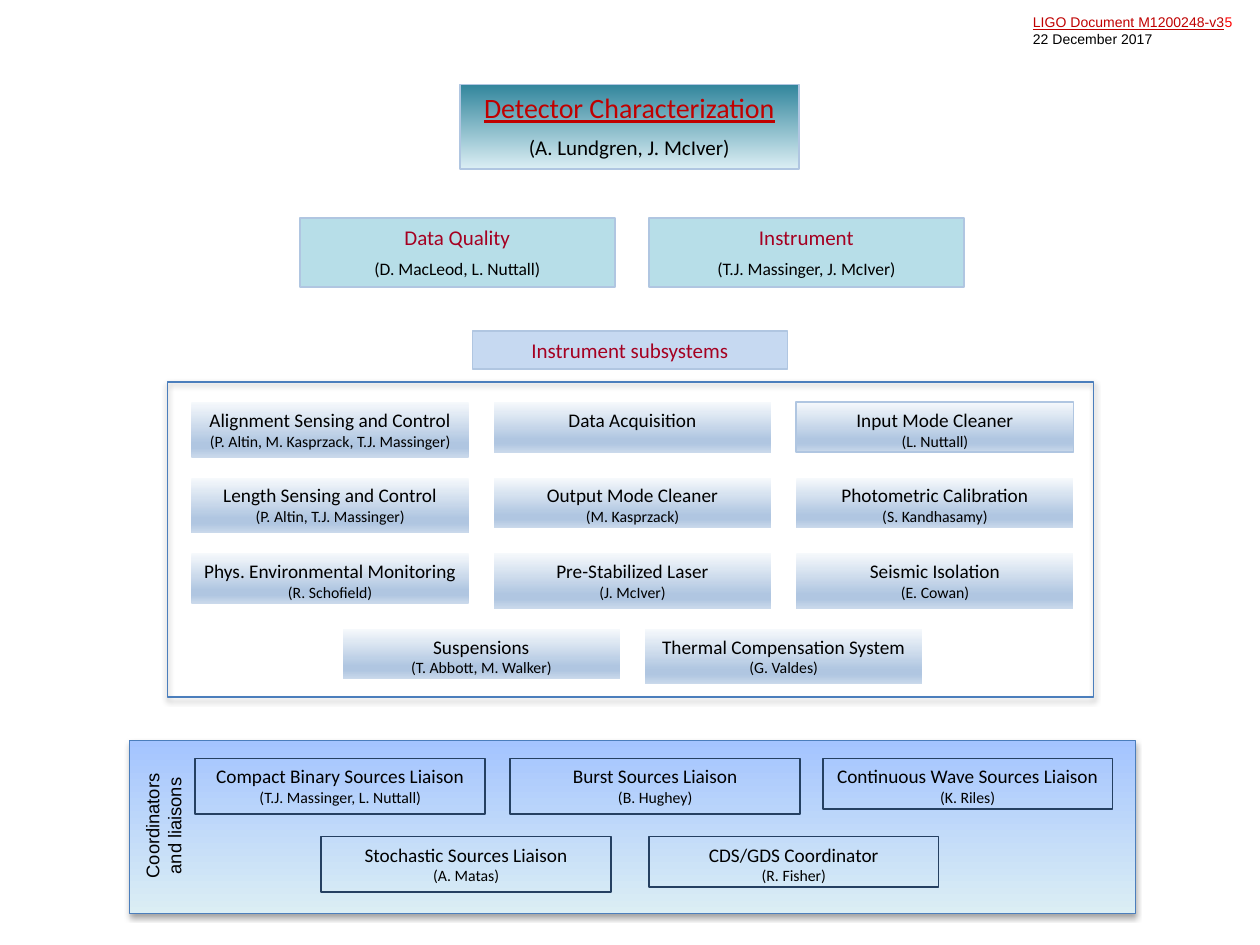
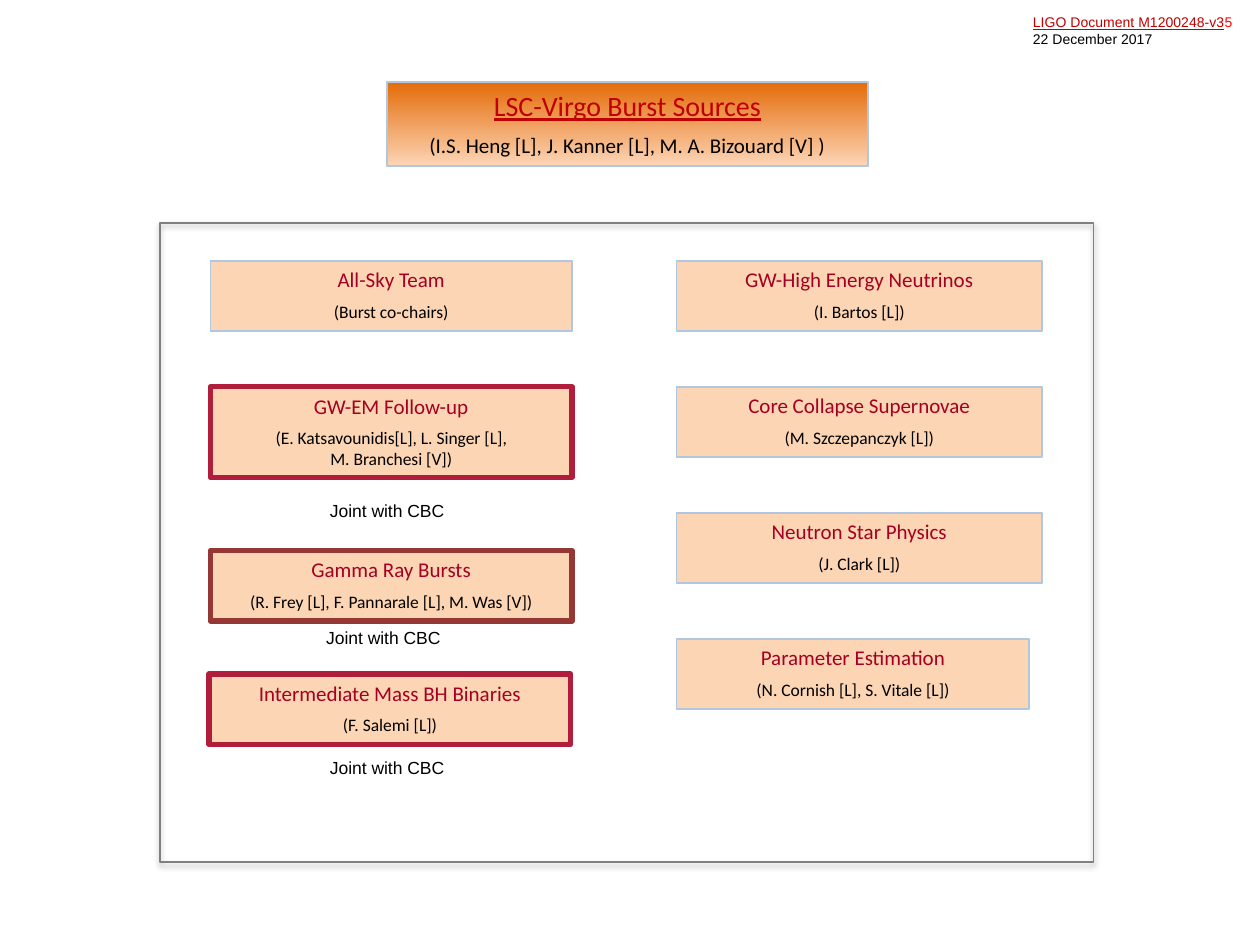
from copy import deepcopy
from dataclasses import dataclass, replace
from typing import Optional

from lxml import etree
from pptx import Presentation
from pptx import util as u
from pptx.dml.color import RGBColor
from pptx.enum import shapes, text
from pptx.oxml.ns import qn

COLORS = {
    "black": "000000", "link": "C00000", "version": "FF0000", "heading": "A50021",
    "pale_line": "B0C6E1", "frame_line": "4B7EBC", "liaison_line": "254061",
    "gray": "808080", "crimson": "B01E3B", "brick": "953735",
    "aqua": "B7DEE8", "periwinkle": "C6D9F1", "peach": "FCD5B5",
    "teal": "31859C", "ice": "DBEEF4", "orange": "E46C0A", "sky": "A4C4FF",
    "mist": "F6F9FC", "haze": "CAD9EB",
}

TITLE = {"name": "Calibri", "size": u.Pt(16), "underline": True, "color": "link"}
TITLE_PEOPLE = {"name": "Calibri", "size": u.Pt(12), "underline": False, "color": "black"}
HEADING = {"name": "Calibri", "size": u.Pt(12), "color": "heading"}
HEADING_PEOPLE = {"name": "Calibri", "size": u.Pt(10), "color": "black"}
ITEM = {"name": "Calibri", "size": u.Pt(11), "color": "black"}
ITEM_PEOPLE = {"name": "Calibri", "size": u.Pt(9), "color": "black"}
LABEL = {"name": "Arial", "size": u.Pt(10.5), "color": "black"}
NOTE = {"name": "Arial", "size": u.Pt(10), "color": "black"}
DOC_DATE = {"name": "Arial", "size": u.Pt(8), "color": "black"}
DOC_LINK = {**DOC_DATE, "underline": True, "color": "link"}
DOC_VERSION = {**DOC_DATE, "color": "version"}

SUBSYSTEM_FILL = ((0, "mist"), (74, "pale_line"), (83, "pale_line"), (100, "haze"))


@dataclass(frozen=True)
class Style:
    fill: tuple = ()
    line: Optional[str] = None
    width: float = 1
    shadow: bool = False
    heading: Optional[dict] = None
    people: Optional[dict] = None
    spaced: bool = False


@dataclass(frozen=True)
class Box:
    left: float
    top: float
    width: float
    height: float
    heading: str = ""
    people: str = ""


DETCHAR_TITLE = Style(((0, "teal"), (100, "ice")), "pale_line",
                      heading=TITLE, people=TITLE_PEOPLE, spaced=True)
BURST_TITLE = replace(DETCHAR_TITLE, fill=((0, "orange"), (100, "peach")))
GROUP = Style(((0, "aqua"),), "pale_line", heading=HEADING, people=HEADING_PEOPLE, spaced=True)
BANNER = replace(GROUP, fill=((0, "periwinkle"),))
TEAM = replace(GROUP, fill=((0, "peach"),))
JOINT = replace(TEAM, line="crimson", width=3)
SUBSYSTEM = Style(SUBSYSTEM_FILL, heading=ITEM, people=ITEM_PEOPLE)
LIAISON = Style(line="liaison_line", heading=ITEM, people=ITEM_PEOPLE)
SUBSYSTEM_FRAME = Style(line="frame_line", shadow=True)
LIAISON_FRAME = Style(((0, "sky"), (100, "ice")), "frame_line", 0.75, True)
TEAM_FRAME = Style(line="gray", shadow=True)

SUBSYSTEM_ROWS = (
    (1.52, (("Alignment Sensing and Control", "(P. Altin, M. Kasprzack, T.J. Massinger)", 0.44),
            ("Data Acquisition", "", 0.4),
            ("Input Mode Cleaner", "(L. Nuttall)", 0.4))),
    (1.52, (("Length Sensing and Control", "(P. Altin, T.J. Massinger)", 0.44),
            ("Output Mode Cleaner", "(M. Kasprzack)", 0.4),
            ("Photometric Calibration", "(S. Kandhasamy)", 0.4))),
    (1.52, (("Phys. Environmental Monitoring", "(R. Schofield)", 0.4),
            ("Pre-Stabilized Laser", "(J. McIver)", 0.44),
            ("Seismic Isolation", "(E. Cowan)", 0.44))),
    (2.72, (("Suspensions", "(T. Abbott, M. Walker)", 0.4),
            ("Thermal Compensation System", "(G. Valdes)", 0.44))),
)

LIAISONS = (
    Box(1.55, 6.02, 2.3, 0.44, "Compact Binary Sources Liaison", "(T.J. Massinger, L. Nuttall)"),
    Box(4.05, 6.02, 2.3, 0.44, "Burst Sources Liaison", "(B. Hughey)"),
    Box(6.53, 6.02, 2.3, 0.4, "Continuous Wave Sources Liaison", "(K. Riles)"),
    Box(2.55, 6.64, 2.3, 0.44, "Stochastic Sources Liaison", "(A. Matas)"),
    Box(5.15, 6.64, 2.3, 0.4, "CDS/GDS Coordinator", "(R. Fisher)"),
)

LEFT_TEAMS = (
    (Box(1.67, 2.07, 2.87, 0.56, "All-Sky Team", "(Burst co-chairs)"), TEAM),
    (Box(1.67, 3.07, 2.87, 0.72, "GW-EM Follow-up",
         "(E. Katsavounidis[L], L. Singer [L],\nM. Branchesi [V])"), JOINT),
    (Box(1.67, 4.37, 2.87, 0.56, "Gamma Ray Bursts",
         "(R. Frey [L], F. Pannarale [L], M. Was [V])"), replace(JOINT, line="brick")),
    (Box(1.66, 5.35, 2.87, 0.56, "Intermediate Mass BH Binaries", "(F. Salemi [L])"), JOINT),
)

RIGHT_TEAMS = (
    ("GW-High Energy Neutrinos", "(I. Bartos [L])", 2.9),
    ("Core Collapse Supernovae", "(M. Szczepanczyk [L])", 2.9),
    ("Neutron Star Physics", "(J. Clark [L])", 2.9),
    ("Parameter Estimation", "(N. Cornish [L], S. Vitale [L])", 2.8),
)

JOINT_NOTES = ((2.52, 3.92), (2.49, 4.93), (2.52, 5.96))


def rgb(name: str) -> RGBColor:
    return RGBColor.from_string(COLORS[name])


def corners(box: Box) -> list:
    return [u.Inches(v) for v in (box.left, box.top, box.width, box.height)]


def format_run(r, fmt: dict) -> None:
    for key, value in fmt.items():
        if key == "color":
            r.font.color.rgb = rgb(value)
        else:
            setattr(r.font, key, value)


def write(p, content: str, fmt: dict, align=text.PP_ALIGN.CENTER) -> None:
    p.text = content
    p.alignment = align
    for r in p.runs:
        format_run(r, fmt)
    for br in p._p.findall(qn("a:br")):
        br.append(deepcopy(p.runs[0]._r.rPr))


def prepare(tf, wrap: bool = True, side: float = 0.05) -> None:
    settings = {
        "word_wrap": wrap, "auto_size": text.MSO_AUTO_SIZE.NONE,
        "vertical_anchor": text.MSO_ANCHOR.TOP,
        "margin_left": u.Inches(side), "margin_right": u.Inches(side),
        "margin_top": u.Inches(0.05), "margin_bottom": u.Inches(0.05),
    }
    for key, value in settings.items():
        setattr(tf, key, value)


def paint(sp, stops: tuple) -> None:
    if not stops:
        sp.fill.background()
    elif len(stops) == 1:
        sp.fill.solid()
        sp.fill.fore_color.rgb = rgb(stops[0][1])
    else:
        sp.fill.gradient()
        sp.fill.gradient_angle = 270
        gs_list = next(sp._element.spPr.iter(qn("a:gsLst")))
        for gs in list(gs_list):
            gs_list.remove(gs)
        for position, name in stops:
            gs = etree.SubElement(gs_list, qn("a:gs"), pos=str(position * 1000))
            etree.SubElement(gs, qn("a:srgbClr"), val=COLORS[name])


def cast_shadow(sp) -> None:
    effects = sp._element.spPr.find(qn("a:effectLst"))
    shadow = etree.SubElement(effects, qn("a:outerShdw"), blurRad="40000", dist="23000",
                              dir="5400000", rotWithShape="0")
    color = etree.SubElement(shadow, qn("a:srgbClr"), val=COLORS["black"])
    etree.SubElement(color, qn("a:alpha"), val="35000")


def dress(sp, box: Box, style: Style) -> None:
    paint(sp, style.fill)
    if style.line:
        sp.line.color.rgb = rgb(style.line)
        sp.line.width = u.Pt(style.width)
    else:
        sp.line.fill.background()
    if box.heading:
        tf = sp.text_frame
        prepare(tf)
        write(tf.paragraphs[0], box.heading, style.heading)
        if box.people:
            p = tf.add_paragraph()
            write(p, box.people, style.people)
            if style.spaced:
                p.space_before = int(style.people["size"] / 2)


def add_box(s, box: Box, style: Style) -> None:
    sp = s.shapes.add_shape(shapes.MSO_SHAPE.RECTANGLE, *corners(box))
    sp.shadow.inherit = False
    dress(sp, box, style)
    if style.shadow:
        cast_shadow(sp)


def add_text(s, box: Box, fmt: dict, align, rotation: float = 0) -> None:
    tb = s.shapes.add_textbox(*corners(box))
    tb.rotation = rotation
    tf = tb.text_frame
    prepare(tf, wrap=False, side=0.1)
    for i, line in enumerate(box.heading.split("\n")):
        write(tf.add_paragraph() if i else tf.paragraphs[0], line, fmt, align)


def add_titled_slide(prs, box: Box, style: Style):
    s = prs.slides.add_slide(prs.slide_layouts[5])
    sp = s.shapes.title
    sp.left, sp.top, sp.width, sp.height = corners(box)
    dress(sp, box, style)

    tf = s.shapes.add_textbox(*corners(Box(8.1, 0.06, 1.84, 0.37))).text_frame
    prepare(tf, wrap=False, side=0.1)
    write(tf.paragraphs[0], "LIGO Document M1200248-v3", DOC_LINK, text.PP_ALIGN.LEFT)
    r = tf.paragraphs[0].add_run()
    r.text = "5"
    format_run(r, DOC_VERSION)
    write(tf.add_paragraph(), "22 December 2017", DOC_DATE, text.PP_ALIGN.LEFT)
    return s


def build_detector_slide(prs) -> None:
    s = add_titled_slide(prs, Box(3.65, 0.67, 2.69, 0.67, "Detector Characterization",
                                  "(A. Lundgren, J. McIver)"), DETCHAR_TITLE)
    add_box(s, Box(2.38, 1.73, 2.5, 0.55, "Data Quality", "(D. MacLeod, L. Nuttall)"), GROUP)
    add_box(s, Box(5.15, 1.73, 2.5, 0.55, "Instrument", "(T.J. Massinger, J. McIver)"), GROUP)
    add_box(s, Box(3.75, 2.63, 2.5, 0.3, "Instrument subsystems"), BANNER)

    add_box(s, Box(1.33, 3.03, 7.35, 2.5), SUBSYSTEM_FRAME)
    for row, (left, items) in enumerate(SUBSYSTEM_ROWS):
        for col, (heading, people, height) in enumerate(items):
            outlined = heading == "Input Mode Cleaner"
            style = replace(SUBSYSTEM, line="pale_line") if outlined else SUBSYSTEM
            add_box(s, Box(left + 2.4 * col, 3.19 + 0.6 * row, 2.2, height,
                           heading, people), style)

    add_box(s, Box(1.03, 5.88, 7.98, 1.37), LIAISON_FRAME)
    for box in LIAISONS:
        add_box(s, box, LIAISON)
    add_text(s, Box(0.61, 6.33, 1.37, 0.45, "Coordinators\nand liaisons"), LABEL,
             text.PP_ALIGN.CENTER, 270)


def build_burst_slide(prs) -> None:
    s = add_titled_slide(prs, Box(3.07, 0.65, 3.82, 0.67, "LSC-Virgo Burst Sources",
                                  "(I.S. Heng [L], J. Kanner [L], M. A. Bizouard [V] )"),
                         BURST_TITLE)
    add_box(s, Box(1.27, 1.77, 7.41, 5.07), TEAM_FRAME)
    for box, style in LEFT_TEAMS:
        add_box(s, box, style)
    for row, (heading, people, width) in enumerate(RIGHT_TEAMS):
        add_box(s, Box(5.37, 2.07 + row, width, 0.56, heading, people), TEAM)
    for left, top in JOINT_NOTES:
        add_text(s, Box(left, top, 1.16, 0.27, "Joint with CBC"), NOTE, text.PP_ALIGN.LEFT)


def main() -> None:
    prs = Presentation()
    prs.slide_width, prs.slide_height = u.Inches(10), u.Inches(7.5)
    build_detector_slide(prs)
    build_burst_slide(prs)
    prs.save("out.pptx")


if __name__ == "__main__":
    main()
